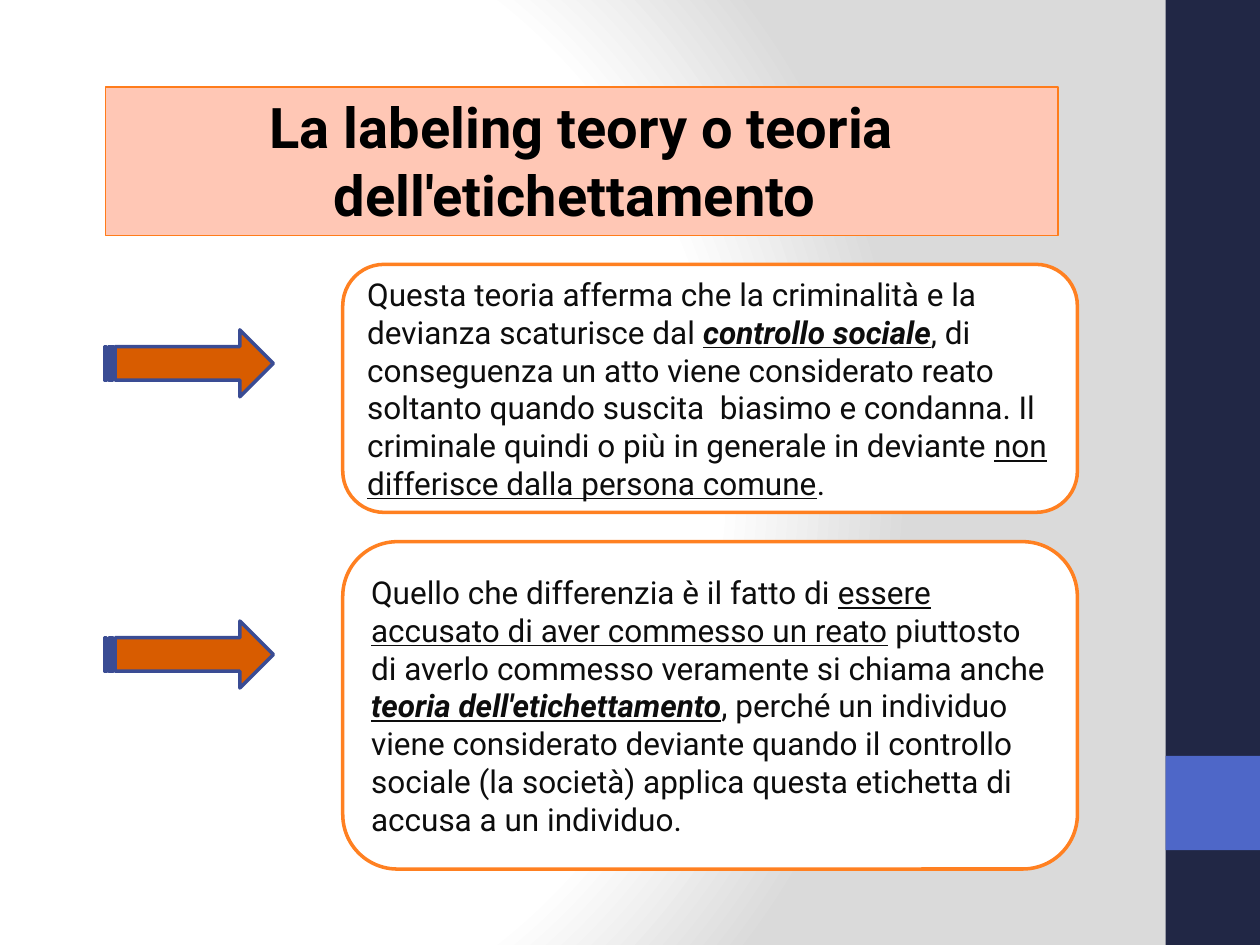
from pptx import Presentation
from pptx.dml.color import RGBColor
from pptx.enum.shapes import MSO_SHAPE
from pptx.enum.text import MSO_ANCHOR, MSO_AUTO_SIZE, PP_ALIGN
from pptx.oxml import parse_xml
from pptx.oxml.ns import nsdecls, qn
from pptx.util import Cm, Pt

FONT = "Roboto"
NAVY = RGBColor(0x21, 0x27, 0x45)
BLUE = RGBColor(0x4E, 0x67, 0xC8)
PEACH = RGBColor(0xFF, 0xC7, 0xB5)
TITLE_EDGE = RGBColor(0xFF, 0x7C, 0x1B)
BOX_EDGE = RGBColor(0xFF, 0x80, 0x21)
ARROW_FILL = RGBColor(0xD8, 0x5C, 0x00)
ARROW_EDGE = RGBColor(0x3A, 0x4C, 0x94)
WHITE = RGBColor(0xFF, 0xFF, 0xFF)
BLACK = RGBColor(0x00, 0x00, 0x00)
INK = RGBColor(0x0D, 0x0D, 0x0D)
GREY = RGBColor(0xDA, 0xDA, 0xDA)

SLIDE_WIDTH, SLIDE_HEIGHT = 25.4, 19.05
BAND_WIDTH = 1.9
ARROW_HEIGHT = 1.35

PLAIN, UNDERLINED, KEY_TERM = "plain", "underlined", "key term"

THEORY = [
    [
        ("Questa teoria afferma che la criminalità e la devianza scaturisce dal ", PLAIN),
        ("controllo sociale", KEY_TERM),
        (", di conseguenza un atto viene considerato reato soltanto quando suscita  biasimo "
         "e condanna. Il criminale quindi o più in generale in deviante ", PLAIN),
        ("non differisce dalla persona comune", UNDERLINED),
        (".", PLAIN),
    ],
]
LABELING = [
    [
        ("Quello che differenzia è il fatto di ", PLAIN),
        ("essere accusato di aver commesso un reato", UNDERLINED),
        (" piuttosto di averlo commesso veramente si chiama anche ", PLAIN),
        ("teoria dell'etichettamento", KEY_TERM),
        (", perché un individuo viene considerato deviante quando il controllo", PLAIN),
    ],
    [("sociale (la società) applica questa etichetta di accusa a un individuo.", PLAIN)],
]
POINTS = [(5.33, 5.0, 6.65, THEORY), (10.92, 6.6, 12.52, LABELING)]


def set_background(slide):
    slide.background.fill.gradient()
    default = slide.element.find(".//" + qn("a:gradFill"))
    stops = "".join(
        f'<a:gs pos="{position * 1000}"><a:srgbClr val="{color}"/></a:gs>'
        for position, color in [(0, WHITE), (75, WHITE), (100, GREY)]
    )
    glow = parse_xml(
        f'<a:gradFill {nsdecls("a")} rotWithShape="1"><a:gsLst>{stops}</a:gsLst>'
        '<a:path path="circle"><a:fillToRect l="20000" t="50000" r="100000" b="50000"/>'
        "</a:path></a:gradFill>"
    )
    default.getparent().replace(default, glow)


def add_block(slide, preset, left, top, width, height, fill, edge=None, weight=1):
    block = slide.shapes.add_shape(preset, Cm(left), Cm(top), Cm(width), Cm(height))
    block.shadow.inherit = False
    block.fill.solid()
    block.fill.fore_color.rgb = fill
    if edge is None:
        block.line.fill.background()
    else:
        block.line.color.rgb = edge
        block.line.width = Pt(weight)
    return block


def style_paragraph(paragraph, size, color, alignment):
    paragraph.alignment = alignment
    paragraph.font.name = FONT
    paragraph.font.size = Pt(size)
    paragraph.font.color.rgb = color


def add_title(slide, wording):
    title = add_block(slide, MSO_SHAPE.RECTANGLE, 2.13, 1.75, 19.2, 3.0, PEACH, TITLE_EDGE)
    frame = title.text_frame
    frame.word_wrap = True
    frame.auto_size = MSO_AUTO_SIZE.SHAPE_TO_FIT_TEXT
    frame.vertical_anchor = MSO_ANCHOR.TOP
    heading = frame.paragraphs[0]
    heading.add_run().text = wording
    style_paragraph(heading, 32, BLACK, PP_ALIGN.CENTER)
    heading.font.bold = True


def add_statement(slide, top, height, paragraphs):
    box = add_block(slide, MSO_SHAPE.ROUNDED_RECTANGLE, 6.91, top, 14.81, height,
                    WHITE, BOX_EDGE, 2)
    frame = box.text_frame
    frame.word_wrap = True
    frame.vertical_anchor = MSO_ANCHOR.MIDDLE
    for index, pieces in enumerate(paragraphs):
        paragraph = frame.add_paragraph() if index else frame.paragraphs[0]
        style_paragraph(paragraph, 18, INK, PP_ALIGN.LEFT)
        for wording, emphasis in pieces:
            run = paragraph.add_run()
            run.text = wording
            if emphasis != PLAIN:
                run.font.underline = True
            if emphasis == KEY_TERM:
                run.font.bold = True
                run.font.italic = True


def main():
    presentation = Presentation()
    presentation.slide_width = Cm(SLIDE_WIDTH)
    presentation.slide_height = Cm(SLIDE_HEIGHT)
    slide = presentation.slides.add_slide(presentation.slide_layouts[6])

    set_background(slide)
    band_left = SLIDE_WIDTH - BAND_WIDTH
    add_block(slide, MSO_SHAPE.RECTANGLE, band_left, 0, BAND_WIDTH, SLIDE_HEIGHT, NAVY)
    add_block(slide, MSO_SHAPE.RECTANGLE, band_left, 15.24, BAND_WIDTH, BAND_WIDTH, BLUE)
    add_title(slide, "La labeling teory o teoria dell'etichettamento ")
    for box_top, box_height, arrow_top, paragraphs in POINTS:
        add_block(slide, MSO_SHAPE.STRIPED_RIGHT_ARROW, 2.11, arrow_top, 3.4, ARROW_HEIGHT,
                  ARROW_FILL, ARROW_EDGE, 2)
        add_statement(slide, box_top, box_height, paragraphs)

    presentation.save("out.pptx")


if __name__ == "__main__":
    main()
